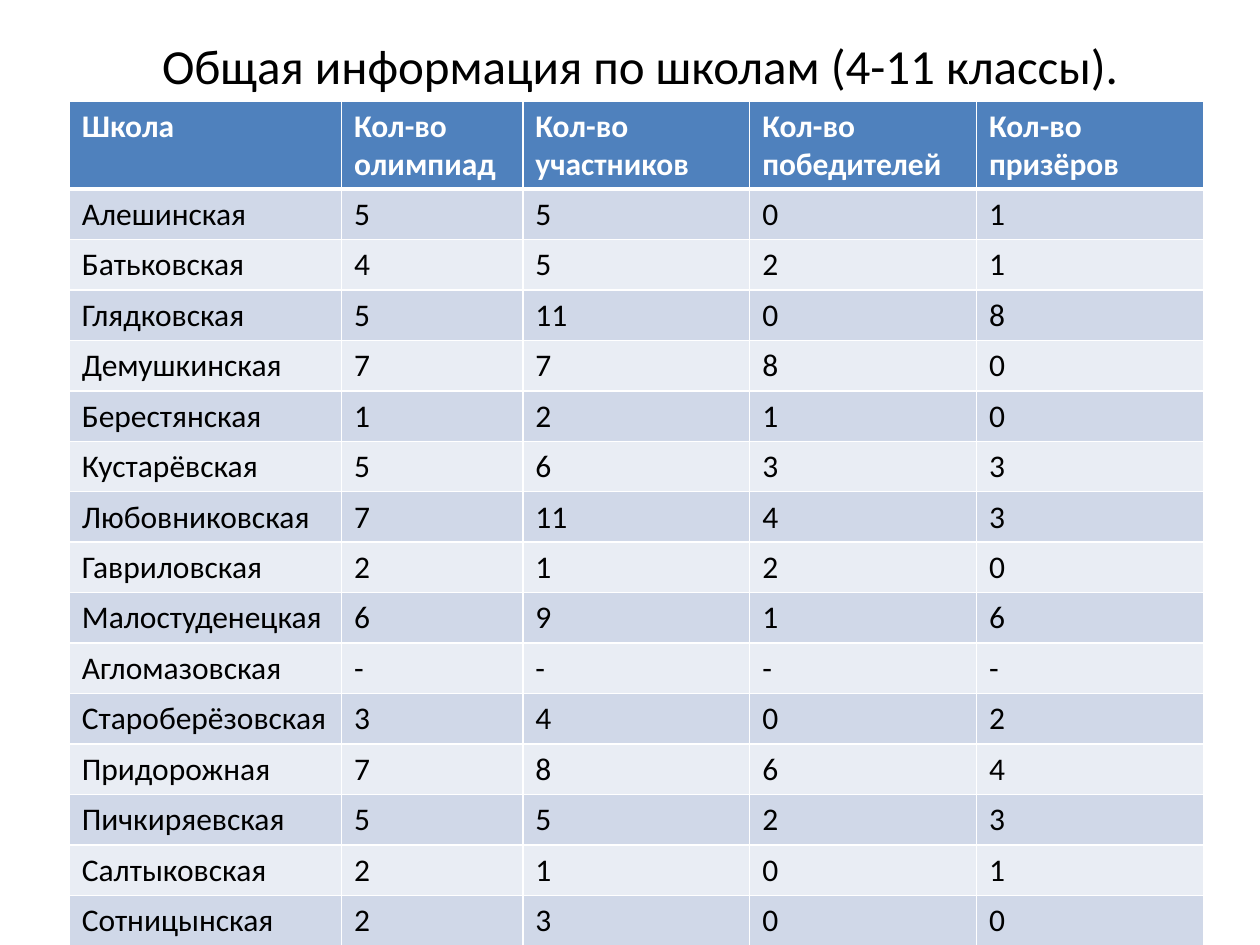
from dataclasses import dataclass

from lxml.etree import SubElement
from pptx import Presentation
from pptx.dml.color import RGBColor
from pptx.enum.text import MSO_AUTO_SIZE, PP_ALIGN
from pptx.oxml.ns import qn
from pptx.util import Inches, Pt


@dataclass(frozen=True)
class Theme:
    font: str = "Calibri"
    title_size: int = 28
    table_size: int = 18
    text: str = "000000"
    white: str = "FFFFFF"
    header: str = "4F81BD"
    bands: tuple = ("D0D8E8", "E9EDF4")


THEME = Theme()

HEADINGS = ["Школа", "Кол-во олимпиад", "Кол-во участников",
            "Кол-во победителей", "Кол-во призёров"]
SCHOOLS = [
    ("Алешинская", 5, 5, 0, 1),
    ("Батьковская", 4, 5, 2, 1),
    ("Глядковская", 5, 11, 0, 8),
    ("Демушкинская", 7, 7, 8, 0),
    ("Берестянская", 1, 2, 1, 0),
    ("Кустарёвская", 5, 6, 3, 3),
    ("Любовниковская", 7, 11, 4, 3),
    ("Гавриловская", 2, 1, 2, 0),
    ("Малостуденецкая", 6, 9, 1, 6),
    ("Агломазовская", "-", "-", "-", "-"),
    ("Староберёзовская", 3, 4, 0, 2),
    ("Придорожная", 7, 8, 6, 4),
    ("Пичкиряевская", 5, 5, 2, 3),
    ("Салтыковская", 2, 1, 0, 1),
    ("Сотницынская", 2, 3, 0, 0),
]
COLUMN_WIDTHS = [2.16, 1.44, 1.8, 1.8, 1.8]
ROW_HEIGHT = 0.39


def write(paragraph, text, color, **font_format):
    run = paragraph.add_run()
    run.text = text
    for name, value in {"name": THEME.font, **font_format}.items():
        setattr(run.font, name, value)
    run.font.color.rgb = RGBColor.from_string(color)


def set_borders(cell, bottom_width):
    """Draw white cell borders; call before the fill, which must follow them."""
    properties = cell._tc.get_or_add_tcPr()
    for side, width in {"L": 1, "R": 1, "T": 1, "B": bottom_width}.items():
        border = SubElement(properties, qn(f"a:ln{side}"), w=str(Pt(width)))
        solid = SubElement(border, qn("a:solidFill"))
        SubElement(solid, qn("a:srgbClr"), val=THEME.white)


prs = Presentation()
prs.slide_width, prs.slide_height = Inches(10), Inches(7.5)
slide = prs.slides.add_slide(prs.slide_layouts[6])

title = slide.shapes.add_textbox(
    Inches(0.86), Inches(0.23), Inches(8.44), Inches(0.57)).text_frame
title.word_wrap = True
title.auto_size = MSO_AUTO_SIZE.SHAPE_TO_FIT_TEXT
title.paragraphs[0].alignment = PP_ALIGN.CENTER
write(title.paragraphs[0], "Общая информация по школам (4-11 классы).",
      THEME.text, size=Pt(THEME.title_size))

rows = [HEADINGS, *SCHOOLS]
results = slide.shapes.add_table(
    len(rows), len(HEADINGS), Inches(0.55), Inches(0.8),
    Inches(sum(COLUMN_WIDTHS)), Inches(ROW_HEIGHT * len(rows))).table
for column, width in zip(results.columns, COLUMN_WIDTHS):
    column.width = Inches(width)

for row_index, values in enumerate(rows):
    is_header = row_index == 0
    fill = THEME.header if is_header else THEME.bands[(row_index - 1) % 2]
    color = THEME.white if is_header else THEME.text
    for column_index, value in enumerate(values):
        cell = results.cell(row_index, column_index)
        set_borders(cell, bottom_width=3 if is_header else 1)
        cell.fill.solid()
        cell.fill.fore_color.rgb = RGBColor.from_string(fill)
        write(cell.text_frame.paragraphs[0], str(value), color,
              size=Pt(THEME.table_size), bold=is_header)

prs.save("out.pptx")
